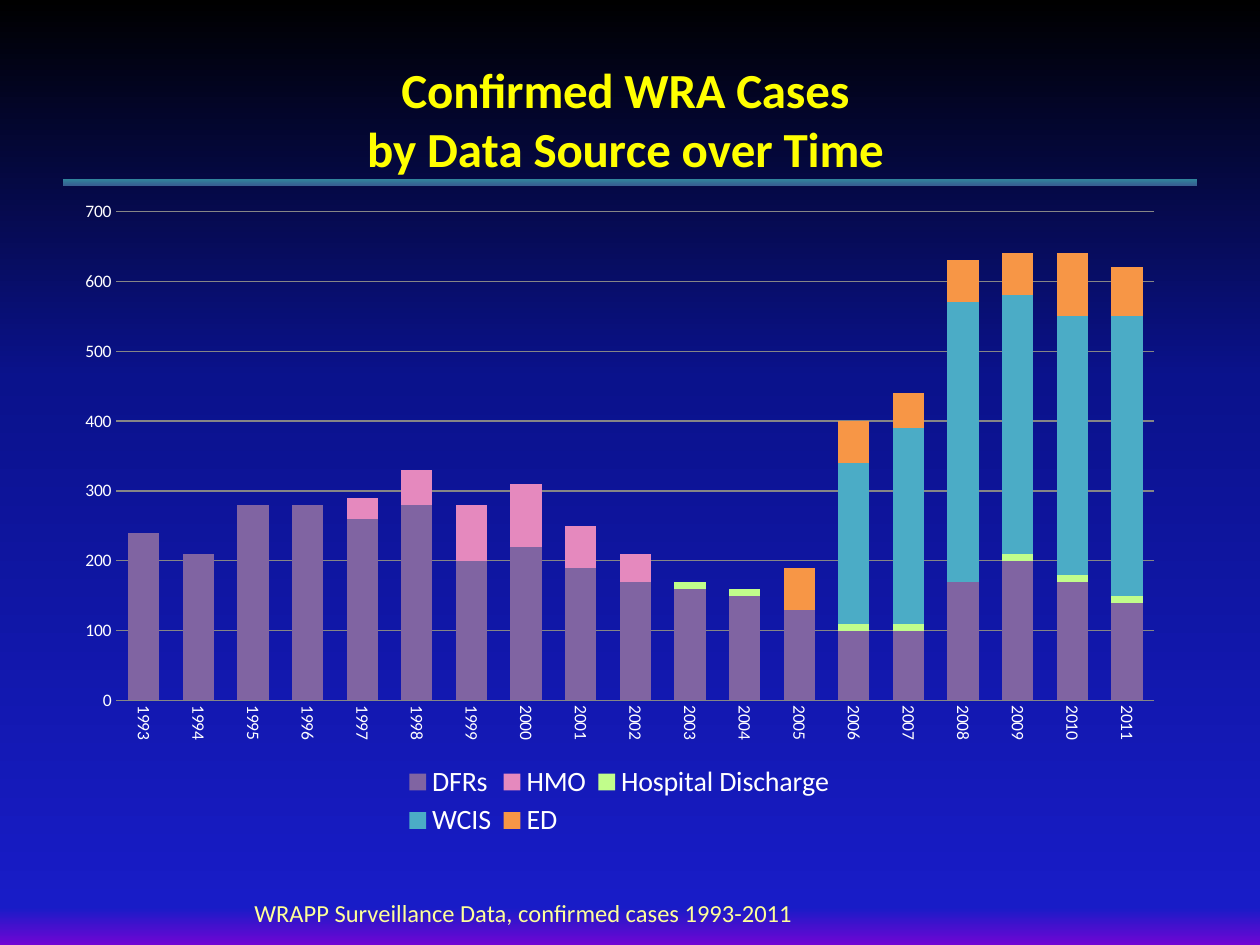
from lxml import etree
from pptx import Presentation
from pptx import util as u
from pptx.chart.data import CategoryChartData
from pptx.dml.color import RGBColor
from pptx.enum import chart as charts, shapes
from pptx.oxml import parse_xml
from pptx.oxml.ns import nsdecls, qn

FONT = "Calibri"
WHITE = RGBColor(0xFF, 0xFF, 0xFF)
YELLOW = RGBColor(0xFF, 0xFF, 0x00)
PALE_YELLOW = RGBColor(0xFF, 0xFF, 0x99)
GRAY = RGBColor(0x86, 0x86, 0x86)
PURPLE = RGBColor(0x80, 0x64, 0xA2)
PINK = RGBColor(0xE5, 0x89, 0xBE)
LIME = RGBColor(0xC1, 0xFD, 0x8B)
TEAL = RGBColor(0x4B, 0xAC, 0xC6)
ORANGE = RGBColor(0xF7, 0x96, 0x46)
BLACK = RGBColor(0x00, 0x00, 0x00)
NAVY = RGBColor(0x0A, 0x12, 0x8C)
BLUE = RGBColor(0x18, 0x1C, 0xC7)
VIOLET = RGBColor(0x70, 0x05, 0xD4)
PLUM = RGBColor(0x8C, 0x3D, 0x91)
SEA = RGBColor(0x31, 0x85, 0x9C)
STEEL = RGBColor(0x37, 0x60, 0x92)

BACKGROUND_STOPS = [(0, BLACK), (40, NAVY), (96, BLUE), (100, VIOLET), (100, PLUM)]
RULE_STOPS = [(0, SEA), (100, STEEL), (100, BLUE), (100, VIOLET), (100, PLUM)]

YEARS = [str(year) for year in range(1993, 2012)]
# Name, colour, first year with a value, values from that year on
SOURCES = [
    ("DFRs", PURPLE, 1993, [240, 210, 280, 280, 260, 280, 200, 220, 190, 170,
                            160, 150, 130, 100, 100, 170, 200, 170, 140]),
    ("HMO", PINK, 1997, [30, 50, 80, 90, 60, 40]),
    ("Hospital Discharge", LIME, 2003, [10, 10, None, 10, 10, 0, 10, 10, 10]),
    ("WCIS", TEAL, 2006, [230, 280, 400, 370, 370, 400]),
    ("ED", ORANGE, 2005, [60, 60, 50, 60, 60, 90, 70]),
]


class SlideBuilder:
    def __init__(self, slide):
        self.slide = slide

    def style(self, font, size, color, bold=False):
        font.name, font.size, font.bold = FONT, u.Pt(size), bold
        font.color.rgb = color

    def gradient(self, fill, element, stops):
        """Fill from top to bottom with the given stops."""
        fill.gradient()
        fill.gradient_angle = 270
        stop_list = next(element.iter(qn("a:gsLst")))
        for stop in list(stop_list):
            stop_list.remove(stop)
        for position, color in stops:
            stop = etree.SubElement(stop_list, qn("a:gs"), pos=str(position * 1000))
            etree.SubElement(stop, qn("a:srgbClr"), val=str(color))

    def background(self, stops):
        self.gradient(self.slide.background.fill, self.slide.element, stops)

    def rule(self, left, top, width, height, stops):
        shape = self.slide.shapes.add_shape(
            shapes.MSO_SHAPE.RECTANGLE, *map(u.Inches, (left, top, width, height)))
        shape.shadow.inherit = False
        shape.line.fill.background()
        self.gradient(shape.fill, shape.element, stops)

    def text(self, left, top, width, height, words, size, color):
        box = self.slide.shapes.add_textbox(*map(u.Inches, (left, top, width, height)))
        box.text_frame.word_wrap = False
        box.text_frame.text = words
        self.style(box.text_frame.paragraphs[0].runs[0].font, size, color)

    def place(self, parent, x, y, width=None, height=None, inner=False):
        """Set a chart part's position as fractions of the chart."""
        for layout in parent.findall(qn("c:layout")):
            parent.remove(layout)
        values = [("layoutTarget", "inner")] if inner else []
        values += [("xMode", "edge"), ("yMode", "edge"), ("x", x), ("y", y)]
        if width:
            values += [("w", width), ("h", height)]
        tags = "".join(f'<c:{name} val="{value}"/>' for name, value in values)
        layout = parse_xml(f'<c:layout {nsdecls("c")}><c:manualLayout>{tags}'
                           "</c:manualLayout></c:layout>")
        overlay = parent.find(qn("c:overlay"))
        parent.insert(0 if overlay is None else parent.index(overlay), layout)

    def axis(self, axis):
        axis.major_tick_mark = axis.minor_tick_mark = charts.XL_TICK_MARK.NONE
        self.style(axis.tick_labels.font, 10, WHITE)

    def stacked_chart(self, left, top, width, height, title, years, sources):
        data = CategoryChartData()
        data.categories = years
        for name, _, first_year, values in sources:
            start = first_year - int(years[0])
            padded = [None] * start + values
            data.add_series(name, padded + [None] * (len(years) - len(padded)))
        chart = self.slide.shapes.add_chart(
            charts.XL_CHART_TYPE.COLUMN_STACKED,
            *map(u.Inches, (left, top, width, height)), data).chart
        self.style(chart.font, 10, BLACK)

        # Columns
        plot = chart.plots[0]
        plot.gap_width, plot.overlap, plot.vary_by_categories = 75, 100, False
        for series, (_, color, _, _) in zip(plot.series, sources):
            series.format.fill.solid()
            series.format.fill.fore_color.rgb = color
        self.place(next(chart.element.iter(qn("c:plotArea"))),
                   0.048, 0.22, 0.933, 0.597, inner=True)

        # Axes
        self.axis(chart.category_axis)
        self.axis(chart.value_axis)
        chart.category_axis.format.line.color.rgb = GRAY
        labels = chart.category_axis.tick_labels.font
        self.style(labels, 10, WHITE)
        body = next(chart.category_axis._element.iter(qn("a:bodyPr")))
        body.set("rot", "5400000")
        body.set("vert", "horz")
        value_axis = chart.value_axis
        value_axis.minimum_scale, value_axis.maximum_scale = 0, 700
        value_axis.major_unit = 100
        value_axis.format.line.fill.background()
        value_axis.major_gridlines.format.line.color.rgb = GRAY

        # Title
        chart.has_title = True
        frame = chart.chart_title.text_frame
        frame.text = title
        for paragraph in frame.paragraphs:
            self.style(paragraph.runs[0].font, 28, YELLOW, bold=True)
        self.place(chart.chart_title._element, 0.27, 0.03)

        # Legend
        chart.has_legend = True
        legend = chart.legend
        legend.position = charts.XL_LEGEND_POSITION.BOTTOM
        legend.include_in_layout = False
        self.style(legend.font, 16, WHITE)
        self.place(legend._element, 0.3, 0.89, 0.4, 0.1)


def main():
    presentation = Presentation()
    presentation.slide_width, presentation.slide_height = u.Inches(10), u.Inches(7.5)
    builder = SlideBuilder(presentation.slides.add_slide(presentation.slide_layouts[6]))

    builder.background(BACKGROUND_STOPS)
    builder.rule(0.5, 1.42, 9, 0.05, RULE_STOPS)
    builder.stacked_chart(0.5, 0.25, 8.83, 6.5,
                          "Confirmed WRA Cases\nby Data Source over Time", YEARS, SOURCES)
    builder.text(1.92, 7.08, 4.51, 0.34,
                 "WRAPP Surveillance Data, confirmed cases 1993-2011", 14, PALE_YELLOW)
    presentation.save("out.pptx")


if __name__ == "__main__":
    main()
